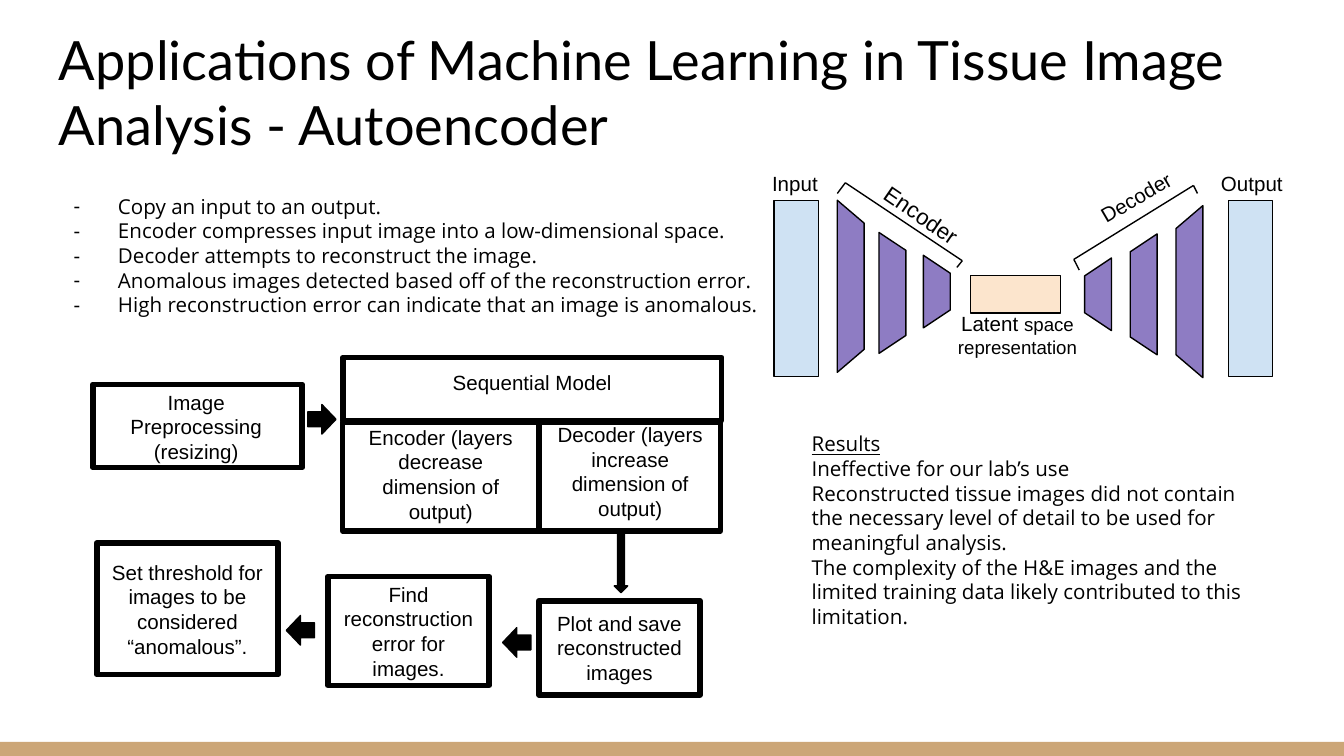
import pptx
import pptx.util
import pptx.dml.color
import pptx.enum.shapes
import pptx.enum.text
import pptx.oxml.ns
from dataclasses import dataclass
from lxml import etree

SHAPE = pptx.enum.shapes.MSO_SHAPE
ALIGN = pptx.enum.text.PP_ALIGN
ANCHOR = pptx.enum.text.MSO_ANCHOR
CELL = pptx.util.Inches(0.1)
COLUMNS = 100
ROWS = COLUMNS * 9 / 16


@dataclass(frozen=True)
class Theme:
    ink: str = "000000"
    paper: str = "FFFFFF"
    band: str = "CCA677"
    image: str = "CFE2F3"
    layer: str = "8E7CC3"
    latent: str = "FCE5CD"
    title_font: str = "Lato"
    body_font: str = "Open Sans"
    label_font: str = "Arial"
    title_size: float = 29
    text_size: float = 11
    small_size: float = 10
    large_label: float = 12
    leading: float = 1.2
    thin: float = 0.75
    thick: float = 3


THEME = Theme()


def color(value):
    return pptx.dml.color.RGBColor.from_string(value)


def grid(*cells):
    return [int(CELL * cell) for cell in cells]


def set_all(target, values):
    for name, value in values.items():
        setattr(target, name, value)


def add_child(parent, tag, **attributes):
    return etree.SubElement(parent, pptx.oxml.ns.qn(tag), attributes)


def add_dash(paragraph, font):
    properties = paragraph._p.get_or_add_pPr()
    for name, inches in {"marL": 0.5, "indent": -0.33}.items():
        properties.set(name, str(pptx.util.Inches(inches)))
    add_child(add_child(properties, "a:buClr"), "a:srgbClr", val=THEME.ink)
    add_child(properties, "a:buFont", typeface=font)
    add_child(properties, "a:buChar", char="-")


def write(shape, paragraphs, font=THEME.label_font, size=THEME.text_size,
          align=ALIGN.CENTER, anchor=ANCHOR.TOP, dashed=False):
    """Each paragraph is a list of (text, font changes) runs."""
    frame = shape.text_frame
    set_all(frame, {"word_wrap": True, "vertical_anchor": anchor,
                    "margin_left": CELL, "margin_right": CELL,
                    "margin_top": CELL, "margin_bottom": CELL})
    for index, runs in enumerate(paragraphs):
        paragraph = frame.add_paragraph() if index else frame.paragraphs[0]
        set_all(paragraph, {"alignment": align,
                            "line_spacing": pptx.util.Pt(size * THEME.leading)})
        if dashed:
            add_dash(paragraph, font)
        for text, changes in runs:
            run = paragraph.add_run()
            run.text = text
            set_all(run.font, {"name": font, "size": pptx.util.Pt(size), **changes})
            run.font.color.rgb = color(THEME.ink)


def plain(*texts):
    return [[(text, {})] for text in texts]


def add_text(shapes, at, paragraphs, rotation=0, **style):
    box = shapes.add_textbox(*grid(*at))
    box.rotation = rotation
    write(box, paragraphs, **style)


def add_block(shapes, kind, at, fill=None, line=THEME.thin, rotation=0, adjust=None):
    shape = shapes.add_shape(kind, *grid(*at))
    shape.shadow.inherit = False
    shape.rotation = rotation
    if adjust is not None:
        shape.adjustments[0] = adjust
    if fill:
        shape.fill.solid()
        shape.fill.fore_color.rgb = color(fill)
    else:
        shape.fill.background()
    if line:
        shape.line.width = pptx.util.Pt(line)
        shape.line.color.rgb = color(THEME.ink)
    else:
        shape.line.fill.background()
    return shape


def add_step(shapes, at, text=None):
    shape = add_block(shapes, SHAPE.RECTANGLE, at, line=THEME.thick)
    if text:
        write(shape, plain(text), anchor=ANCHOR.MIDDLE)


def add_bracket(shapes, points):
    for start, end in zip(points, points[1:]):
        line = shapes.add_connector(pptx.enum.shapes.MSO_CONNECTOR.STRAIGHT,
                                    *grid(*start, *end))
        line.line.width = pptx.util.Pt(THEME.thin)
        line.line.color.rgb = color(THEME.ink)
        add_child(line._element.spPr, "a:effectLst")


def add_layers(shapes, layers, rotation):
    """Each layer is centre column, centre row, length and slant."""
    thickness = 2
    for column, row, length, slant in layers:
        at = (column - length / 2, row - thickness / 2, length, thickness)
        add_block(shapes, SHAPE.TRAPEZOID, at, THEME.layer,
                  rotation=rotation, adjust=slant)


def add_network(shapes):
    # Input and output images, with the latent space between
    for column, label_column, label in ((57.6, 54.5, "Input"), (91.4, 88.5, "Output")):
        add_block(shapes, SHAPE.RECTANGLE, (column, 14.9, 3.3, 13.1), THEME.image)
        add_text(shapes, (label_column, 11.8, 9.3, 2.6), plain(label))
    add_block(shapes, SHAPE.RECTANGLE, (72.2, 20.5, 6.7, 2.8), THEME.latent)
    add_text(shapes, (69.8, 22.3, 11.8, 2.6),
             [[("Latent ", {"size": pptx.util.Pt(THEME.text_size)}),
               ("space representation", {})]], size=THEME.small_size)
    # Encoder and decoder layers
    add_layers(shapes, [(63.3, 21.3, 12.8, 0.854), (66.4, 21.8, 9, 0.667),
                        (69.7, 21.7, 5.4, 0.667)], 90)
    add_layers(shapes, [(81.7, 21.9, 5.4, 0.667), (85.1, 21.9, 9, 0.667),
                        (88.5, 21.7, 12.8, 0.854)], 270)
    # Brackets and their slanted labels
    add_bracket(shapes, [(62.3, 14.4), (62.9, 13.6), (71.6, 19.4), (71.2, 19.9)])
    add_bracket(shapes, [(80.3, 20.1), (79.9, 19.3), (88.8, 13.8), (89.1, 14.4)])
    add_text(shapes, (64.3, 14.1, 9.3, 2.6), plain("Encoder"), 34.4,
             size=THEME.large_label)
    add_text(shapes, (79.6, 12.9, 9.3, 2.6), plain("Decoder"), 329.7)


def add_workflow(shapes):
    # Frames with labels placed on their own
    for frame, label, text in (
            ((6.9, 28.6, 15.6, 6.2), (7.2, 28, 14.8, 4.7),
             "Image Preprocessing (resizing)"),
            ((25.5, 26.6, 28.2, 4.7), (25.5, 26.6, 28.2, 4.7), "Sequential Model"),
            ((25.5, 31.4, 14.6, 8.1), (25.4, 30.6, 14.8, 3.6),
             "Encoder (layers decrease dimension of output)"),
            ((40.1, 31.4, 13.5, 8.1), (40.1, 30.4, 13.6, 2.7),
             "Decoder (layers increase dimension of output)")):
        add_step(shapes, frame)
        add_text(shapes, label, plain(text))
    # Arrows from step to step
    for at, rotation in (((22.9, 30.1, 2.1, 2.2), 0), ((43.9, 41.3, 4.6, 1), 90),
                         ((37.4, 46.7, 2.1, 2.2), 180), ((21.3, 45.8, 2.1, 2.2), 180)):
        add_block(shapes, SHAPE.RIGHT_ARROW, at, THEME.ink, rotation=rotation)
    # Framed steps whose labels sit in the frame
    for at, text in (
            ((24.4, 42.9, 12, 8.1), "Find reconstruction error for images."),
            ((7.2, 40.4, 13.5, 9.8),
             "Set threshold for images to be considered “anomalous”."),
            ((40.1, 44.7, 12, 7), "Plot and save reconstructed images")):
        add_step(shapes, at, text)


def main():
    presentation = pptx.Presentation()
    width, height = grid(COLUMNS, ROWS)
    set_all(presentation, {"slide_width": width, "slide_height": height})
    slide = presentation.slides.add_slide(presentation.slide_layouts[6])
    slide.background.fill.solid()
    slide.background.fill.fore_color.rgb = color(THEME.paper)
    shapes = slide.shapes

    # Footer band and title
    band_top = 55.2
    add_block(shapes, SHAPE.RECTANGLE, (0, band_top, COLUMNS, ROWS - band_top),
              THEME.band, line=None)
    add_text(shapes, (3.4, 3.5, 93.2, 9.1),
             plain("Applications of Machine Learning in Tissue Image Analysis - Autoencoder"),
             font=THEME.title_font, size=THEME.title_size, align=ALIGN.LEFT,
             anchor=ANCHOR.BOTTOM)

    # Main points
    add_text(shapes, (2.8, 13.4, 94.4, 21.8), plain(
        "Copy an input to an output.",
        "Encoder compresses input image into a low-dimensional space.",
        "Decoder attempts to reconstruct the image.",
        "Anomalous images detected based off of the reconstruction error.",
        "High reconstruction error can indicate that an image is anomalous."),
        font=THEME.body_font, align=ALIGN.JUSTIFY, dashed=True)

    # Diagrams
    add_network(shapes.add_group_shape().shapes)
    add_workflow(shapes.add_group_shape().shapes)

    # Results
    add_text(shapes, (59.4, 31.1, 35.5, 17.7), [[("Results", {"underline": True})]] + plain(
        "Ineffective for our lab’s use",
        "Reconstructed tissue images did not contain the necessary level of detail "
        "to be used for meaningful analysis.",
        "The complexity of the H&E images and the limited training data likely "
        "contributed to this limitation."),
        font=THEME.body_font, align=ALIGN.LEFT)

    presentation.save("out.pptx")


if __name__ == "__main__":
    main()
